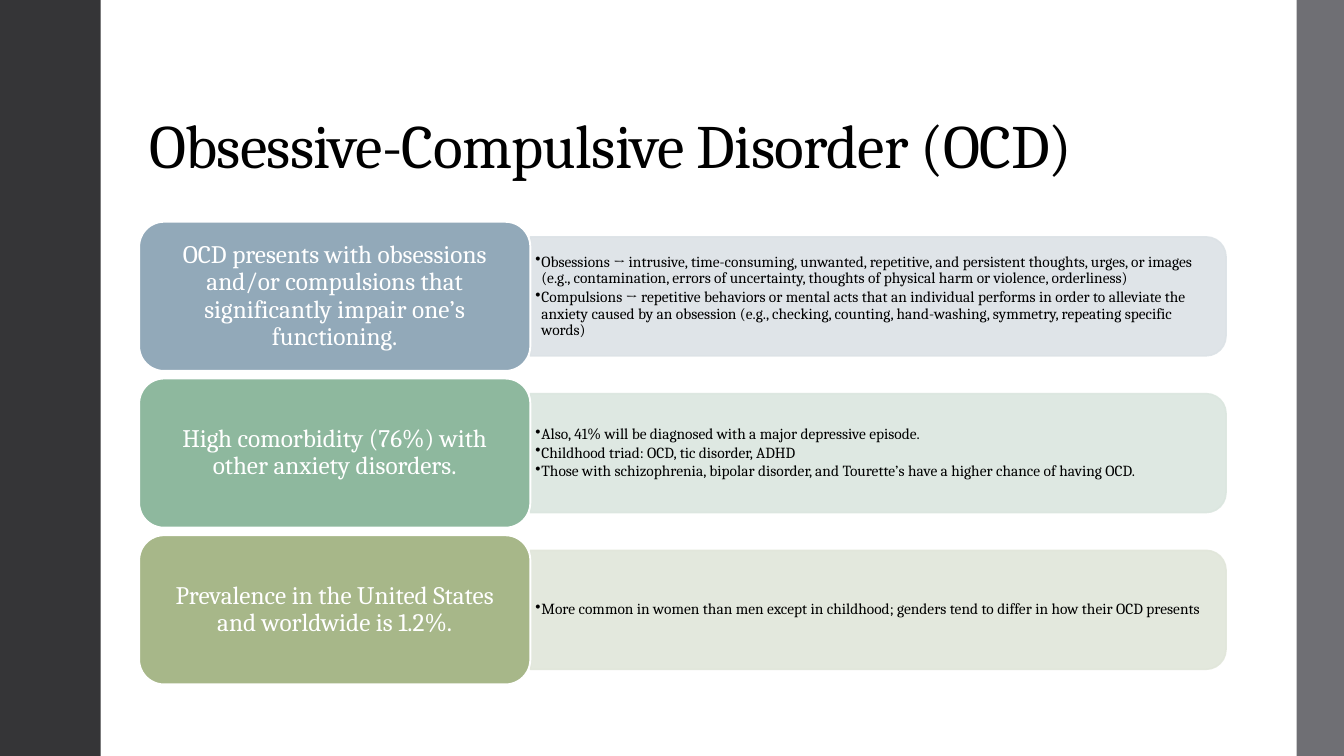
import pptx
import pptx.util
import pptx.dml.color
import pptx.enum.shapes
import pptx.enum.text
import pptx.oxml.ns
from lxml import etree

Inches, Pt = pptx.util.Inches, pptx.util.Pt
RGB = pptx.dml.color.RGBColor.from_string
qn = pptx.oxml.ns.qn
MSO = pptx.enum.shapes.MSO_SHAPE
ANCHOR = pptx.enum.text.MSO_ANCHOR
ALIGN = pptx.enum.text.PP_ALIGN

COLORS = {
    "text": "000000", "white": "FFFFFF",
    "left_bar": "353537", "right_bar": "6F6F74",
    "blue": "92A9B9", "blue_pale": "DCE2E6",
    "green": "8EB89E", "green_pale": "DBE6DF",
    "olive": "A7B789", "olive_pale": "E1E6DA",
}
ROWS = [
    ("blue", "OCD presents with obsessions and/or compulsions that significantly impair one’s functioning.", [
        "Obsessions → intrusive, time-consuming, unwanted, repetitive, and persistent thoughts, urges, or images (e.g., contamination, errors of uncertainty, thoughts of physical harm or violence, orderliness)",
        "Compulsions → repetitive behaviors or mental acts that an individual performs in order to alleviate the anxiety caused by an obsession (e.g., checking, counting, hand-washing, symmetry, repeating specific words)",
    ]),
    ("green", "High comorbidity (76%) with other anxiety disorders.", [
        "Also, 41% will be diagnosed with a major depressive episode.",
        "Childhood triad: OCD, tic disorder, ADHD",
        "Those with schizophrenia, bipolar disorder, and Tourette’s have a higher chance of having OCD.",
    ]),
    ("olive", "Prevalence in the United States and worldwide is 1.2%.", [
        "More common in women than men except in childhood; genders tend to differ in how their OCD presents",
    ]),
]
LEFT, TOP, PITCH = 1.38, 2.2, 1.555
LABEL_W, LABEL_H = 3.88, 1.48
PANEL_W, PANEL_H = 6.9, 1.18
TEXT_W, TEXT_H = 6.84, 1.07


def add_box(kind, x, y, w, h, fill, line=None, width=0):
    sp = s.shapes.add_shape(kind, Inches(x), Inches(y), Inches(w), Inches(h))
    sp.shadow.inherit = False
    sp.fill.solid()
    sp.fill.fore_color.rgb = RGB(COLORS[fill])
    if line:
        sp.line.color.rgb = RGB(COLORS[line])
        sp.line.width = Pt(width)
    else:
        sp.line.fill.background()
    return sp


def set_text(tf, lines, size, color, align, anchor, insets, after=0):
    frame = {"word_wrap": True, "vertical_anchor": anchor,
             "auto_size": pptx.enum.text.MSO_AUTO_SIZE.NONE,
             "margin_left": Inches(insets[0]), "margin_right": Inches(insets[0]),
             "margin_top": Inches(insets[1]), "margin_bottom": Inches(insets[1])}
    for name, value in frame.items():
        setattr(tf, name, value)
    for i, line in enumerate(lines):
        p = tf.add_paragraph() if i else tf.paragraphs[0]
        for name, value in {"alignment": align, "line_spacing": 0.9,
                            "space_before": Pt(0), "space_after": Pt(after)}.items():
            setattr(p, name, value)
        r = p.add_run()
        r.text = line
        for name, value in {"name": "Cambria", "size": Pt(size), "bold": False}.items():
            setattr(r.font, name, value)
        r.font.color.rgb = RGB(COLORS[color])


prs = pptx.Presentation()
prs.slide_width, prs.slide_height = Inches(13.33), Inches(7.5)
s = prs.slides.add_slide(prs.slide_layouts[5])
s.background.fill.solid()
s.background.fill.fore_color.rgb = RGB(COLORS["white"])

title = s.shapes.title
for name, value in {"left": 1.38, "top": 0.4, "width": 10.78, "height": 1.45}.items():
    setattr(title, name, Inches(value))
set_text(title.text_frame, ["Obsessive-Compulsive Disorder (OCD)"], 44, "text",
         ALIGN.LEFT, ANCHOR.BOTTOM, (0.1, 0.05))
title.text_frame.paragraphs[0].runs[0].font._element.set("spc", "-50")

add_box(MSO.RECTANGLE, 0, 0, 1, 7.5, "left_bar")
add_box(MSO.RECTANGLE, 12.86, 0, 0.47, 7.5, "right_bar")

for i, (color, label, points) in enumerate(ROWS):
    y = TOP + i * PITCH
    mid = y + LABEL_H / 2
    x = LEFT + LABEL_W

    panel = add_box(MSO.ROUND_2_SAME_RECTANGLE, x + (PANEL_W - PANEL_H) / 2, mid - PANEL_W / 2,
                    PANEL_H, PANEL_W, color + "_pale", color + "_pale", 1.1)
    panel.rotation = 90
    for clr in panel._element.spPr.iter(qn("a:srgbClr")):
        etree.SubElement(clr, qn("a:alpha")).set("val", "90000")

    tb = s.shapes.add_textbox(Inches(x), Inches(mid - TEXT_H / 2), Inches(TEXT_W), Inches(TEXT_H))
    set_text(tb.text_frame, points, 11, "text", ALIGN.LEFT, ANCHOR.MIDDLE, (0.05, 0.02), 1.5)
    for p in tb.text_frame.paragraphs:
        pPr = p._p.get_or_add_pPr()
        pPr.set("marL", str(Inches(0.06)))
        pPr.set("indent", str(Inches(-0.06)))
        etree.SubElement(pPr, qn("a:buChar")).set("char", "•")

    box = add_box(MSO.ROUNDED_RECTANGLE, LEFT, y, LABEL_W, LABEL_H, color, "white", 1.35)
    set_text(box.text_frame, [label], 18, "white", ALIGN.CENTER, ANCHOR.MIDDLE, (0.07, 0.04))

prs.save("out.pptx")
